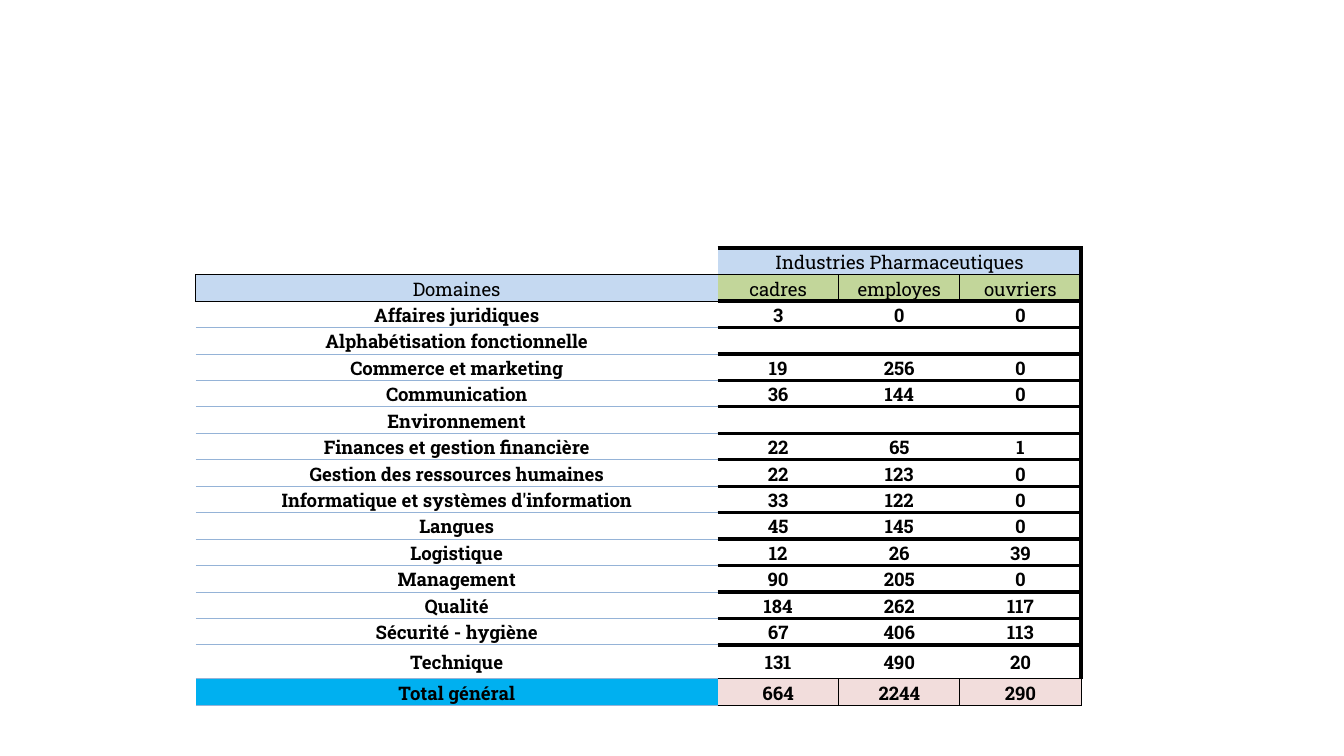
from dataclasses import dataclass

from lxml import etree
from pptx import Presentation
from pptx.dml.color import RGBColor
from pptx.enum.text import MSO_ANCHOR, PP_ALIGN
from pptx.oxml.ns import qn
from pptx.util import Pt

CENTER = PP_ALIGN.CENTER
BOTTOM, MIDDLE = MSO_ANCHOR.BOTTOM, MSO_ANCHOR.MIDDLE
SCALE = 3600


@dataclass(frozen=True)
class Theme:
    font: str = "Roboto Slab"
    size: int = 10
    ink: str = "000000"
    rule: str = "95B3D7"
    header: str = "C5D9F1"
    category: str = "C2D69A"
    total_label: str = "00B0F0"
    total_value: str = "F2DDDC"


THEME = Theme()
THICK = (THEME.ink, 2)
THIN = (THEME.ink, 0.5)
LIGHT = (THEME.rule, 0.5)

SLIDE_WIDTH, SLIDE_HEIGHT = 2540, 1429
TABLE_LEFT, TABLE_TOP = 370, 419
COLUMN_WIDTHS = [986, 229, 229, 229]
ROW_HEIGHT, TALL_ROW_HEIGHT = 50, 64

HEADINGS = [
    ("", "", "", ""),
    ("", "Industries Pharmaceutiques", "", ""),
    ("Domaines", "cadres", "employes", "ouvriers"),
]
DOMAINS = [
    ("Affaires juridiques", 3, 0, 0),
    ("Alphabétisation fonctionnelle", "", "", ""),
    ("Commerce et marketing", 19, 256, 0),
    ("Communication", 36, 144, 0),
    ("Environnement", "", "", ""),
    ("Finances et gestion financière", 22, 65, 1),
    ("Gestion des ressources humaines", 22, 123, 0),
    ("Informatique et systèmes d'information", 33, 122, 0),
    ("Langues", 45, 145, 0),
    ("Logistique", 12, 26, 39),
    ("Management", 90, 205, 0),
    ("Qualité", 184, 262, 117),
    ("Sécurité - hygiène", 67, 406, 113),
    ("Technique", 131, 490, 20),
]
TOTAL = ("Total général", 664, 2244, 290)
ROWS = [*HEADINGS, *DOMAINS, TOTAL]
GROUP_ROW, LABEL_ROW = 1, 2
FIRST_DOMAIN = len(HEADINGS)
TOTAL_ROW = len(ROWS) - 1


def px(length):
    return length * SCALE


def horizontal_edge(edge, column):
    if column == 0:
        if edge < LABEL_ROW:
            return None
        return THIN if edge <= FIRST_DOMAIN else LIGHT
    if edge == 0:
        return None
    return THIN if edge == LABEL_ROW or edge >= TOTAL_ROW else THICK


def vertical_edge(edge, row):
    if edge == 0:
        return THIN if row == LABEL_ROW else None
    if edge == len(COLUMN_WIDTHS) and GROUP_ROW <= row < TOTAL_ROW:
        return THICK
    if edge > 1 and row in (LABEL_ROW, TOTAL_ROW):
        return THIN
    return None


def cell_fill(row, column):
    if row == GROUP_ROW and column:
        return THEME.header
    if row == LABEL_ROW:
        return THEME.category if column else THEME.header
    if row == TOTAL_ROW:
        return THEME.total_value if column else THEME.total_label
    return None


def add_border(cell, side, line):
    properties = cell._tc.get_or_add_tcPr()
    border = etree.SubElement(properties, qn(f"a:ln{side}"))
    if line is None:
        etree.SubElement(border, qn("a:noFill"))
        return
    color, width = line
    border.set("w", str(Pt(width)))
    solid = etree.SubElement(border, qn("a:solidFill"))
    etree.SubElement(solid, qn("a:srgbClr"), val=color)


def write_text(cell, text, *, bold=False, anchor=MIDDLE, size=THEME.size):
    cell.margin_left = cell.margin_right = px(3)
    cell.margin_top, cell.margin_bottom = px(3), 0
    cell.vertical_anchor = anchor
    para = cell.text_frame.paragraphs[0]
    para.alignment = CENTER
    if text == "":
        etree.SubElement(para._p, qn("a:endParaRPr"), sz=str(size * 100))
        return
    span = para.add_run()
    span.text = str(text)
    span.font.name = THEME.font
    span.font.size = Pt(size)
    span.font.bold = bold
    span.font.color.rgb = RGBColor.from_string(THEME.ink)


def format_cell(cell, row, column):
    right = column + (cell.span_width if cell.is_merge_origin else 1)
    add_border(cell, "L", vertical_edge(column, row))
    add_border(cell, "R", vertical_edge(right, row))
    add_border(cell, "T", horizontal_edge(row, column))
    add_border(cell, "B", horizontal_edge(row + 1, column))
    color = cell_fill(row, column)
    if color:
        cell.fill.solid()
        cell.fill.fore_color.rgb = RGBColor.from_string(color)
    else:
        cell.fill.background()


def add_training_table(page):
    heights = [ROW_HEIGHT] * len(ROWS)
    heights[TOTAL_ROW - 1] = TALL_ROW_HEIGHT
    table = page.shapes.add_table(
        len(ROWS), len(COLUMN_WIDTHS), px(TABLE_LEFT), px(TABLE_TOP),
        px(sum(COLUMN_WIDTHS)), px(sum(heights))).table
    table.first_row = table.horz_banding = False
    for column, width in zip(table.columns, COLUMN_WIDTHS):
        column.width = px(width)
    for row, height in zip(table.rows, heights):
        row.height = px(height)
    table.cell(GROUP_ROW, 1).merge(table.cell(GROUP_ROW, 3))
    for row, values in enumerate(ROWS):
        is_heading = row < FIRST_DOMAIN
        for column, value in enumerate(values):
            cell = table.cell(row, column)
            format_cell(cell, row, column)
            write_text(cell, value, bold=not is_heading,
                       anchor=BOTTOM if is_heading else MIDDLE)


def main():
    deck = Presentation()
    deck.slide_width, deck.slide_height = px(SLIDE_WIDTH), px(SLIDE_HEIGHT)
    page = deck.slides.add_slide(deck.slide_layouts[6])
    add_training_table(page)
    deck.save("out.pptx")


if __name__ == "__main__":
    main()
